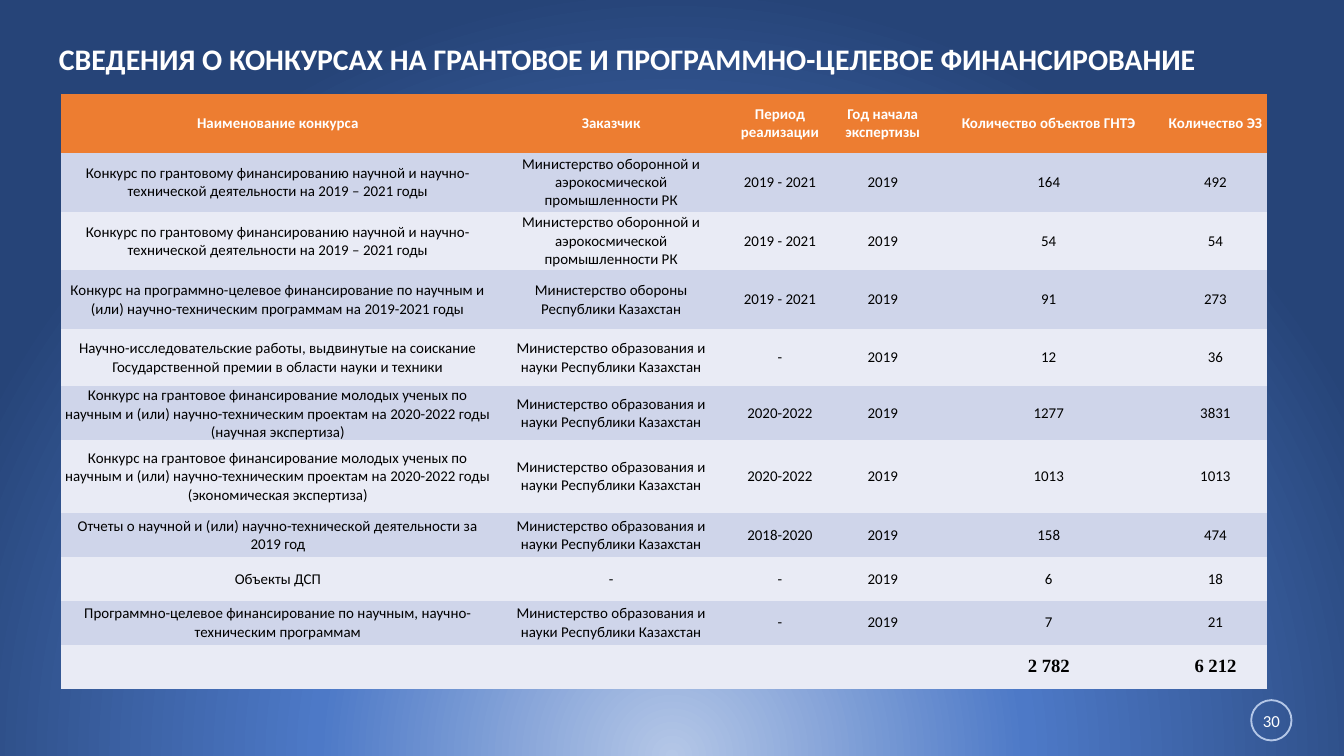
from lxml import etree
from pptx import Presentation
from pptx.dml.color import RGBColor
from pptx.enum.shapes import MSO_SHAPE
from pptx.enum.text import MSO_ANCHOR, MSO_AUTO_SIZE, PP_ALIGN
from pptx.oxml.ns import qn
from pptx.util import Pt

OVAL = MSO_SHAPE.OVAL
MIDDLE = MSO_ANCHOR.MIDDLE
LEFT, CENTER = PP_ALIGN.LEFT, PP_ALIGN.CENTER
FIT_SHAPE = MSO_AUTO_SIZE.SHAPE_TO_FIT_TEXT
NO_GRID_STYLE = "{2D5ABB26-0587-4C30-8999-92F81FD0307C}"

WHITE, BLACK = "FFFFFF", "000000"
ORANGE, BAND_DARK, BAND_LIGHT = "ED7D31", "CFD5EA", "E9EBF5"
GRADIENT = [(0, "B4C7E7"), (46, "4D79C7"), (100, "264478")]

GRANT = "Конкурс по грантовому финансированию научной и научно-технической деятельности на 2019 – 2021 годы"
YOUNG = "Конкурс на грантовое финансирование молодых ученых по научным и (или) научно-техническим проектам на 2020-2022 годы"
AEROSPACE = "Министерство оборонной и аэрокосмической промышленности РК"
DEFENCE = "Министерство обороны Республики Казахстан"
EDUCATION = "Министерство образования и науки Республики Казахстан"

ROWS = [
    ("Наименование конкурса", "Заказчик", "Период реализации", "Год начала экспертизы",
     "Количество объектов ГНТЭ", "Количество ЭЗ"),
    (GRANT, AEROSPACE, "2019 - 2021", "2019", "164", "492"),
    (GRANT, AEROSPACE, "2019 - 2021", "2019", "54", "54"),
    ("Конкурс на программно-целевое финансирование по научным и (или) научно-техническим программам на 2019-2021 годы",
     DEFENCE, "2019 - 2021", "2019", "91", "273"),
    ("Научно-исследовательские работы, выдвинутые на соискание Государственной премии в области науки и техники",
     EDUCATION, "-", "2019", "12", "36"),
    (YOUNG + " (научная экспертиза)", EDUCATION, "2020-2022", "2019", "1277", "3831"),
    (YOUNG + " (экономическая экспертиза)", EDUCATION, "2020-2022", "2019", "1013", "1013"),
    ("Отчеты о научной и (или) научно-технической деятельности за 2019 год",
     EDUCATION, "2018-2020", "2019", "158", "474"),
    ("Объекты ДСП", "-", "-", "2019", "6", "18"),
    ("Программно-целевое финансирование по научным, научно-техническим программам",
     EDUCATION, "-", "2019", "7", "21"),
    ("", "", "", "", "2 782", "6 212"),
]
COLUMN_WIDTHS = [232.6, 124.6, 56.2, 54, 123.8, 54.8]
ROW_HEIGHTS = [31.5] * 4 + [30.6, 28.2, 39.2] + [23.5] * 4


def color(value):
    return RGBColor.from_string(value)


def add_span(para, text, size, ink, bold=False, face="Calibri"):
    span = para.add_run()
    span.text = text
    span.font.name = face
    span.font.size = Pt(size)
    span.font.bold = bold
    span.font.color.rgb = color(ink)


deck = Presentation()
deck.slide_width, deck.slide_height = Pt(720), Pt(405)
page = deck.slides.add_slide(deck.slide_layouts[5])

page.background.fill.gradient()
gradient = page.background._cSld.find(".//" + qn("a:gradFill"))
for child in list(gradient):
    gradient.remove(child)
stops = etree.SubElement(gradient, qn("a:gsLst"))
for position, shade in GRADIENT:
    stop = etree.SubElement(stops, qn("a:gs"), pos=str(position * 1000))
    etree.SubElement(stop, qn("a:srgbClr"), val=shade)
circle = etree.SubElement(gradient, qn("a:path"), path="circle")
etree.SubElement(circle, qn("a:fillToRect"), l="50000", t="130000", r="50000", b="-30000")

title = page.shapes.title
title.left, title.top, title.width, title.height = Pt(26.6), Pt(15.8), Pt(633), Pt(27.4)
frame = title.text_frame
frame.word_wrap = True
frame.auto_size = FIT_SHAPE
frame.vertical_anchor = MIDDLE
frame.margin_left = frame.margin_right = Pt(5)
frame.margin_top = frame.margin_bottom = Pt(2.7)
para = frame.paragraphs[0]
para.alignment = LEFT
para.line_spacing = 1.2
add_span(para, "СВЕДЕНИЯ О КОНКУРСАХ НА ГРАНТОВОЕ И ПРОГРАММНО-ЦЕЛЕВОЕ ФИНАНСИРОВАНИЕ", 16, WHITE, True)

table = page.shapes.add_table(len(ROWS), len(COLUMN_WIDTHS), Pt(32.6), Pt(50.4),
                              Pt(sum(COLUMN_WIDTHS)), Pt(sum(ROW_HEIGHTS))).table
table._tbl.tblPr.find(qn("a:tableStyleId")).text = NO_GRID_STYLE
for column, width in zip(table.columns, COLUMN_WIDTHS):
    column.width = Pt(width)
for row, height in zip(table.rows, ROW_HEIGHTS):
    row.height = Pt(height)

for row_index, texts in enumerate(ROWS):
    is_header = row_index == 0
    is_total = row_index == len(ROWS) - 1
    band = ORANGE if is_header else BAND_DARK if row_index % 2 else BAND_LIGHT
    for column_index, text in enumerate(texts):
        cell = table.cell(row_index, column_index)
        cell.fill.solid()
        cell.fill.fore_color.rgb = color(band)
        cell.vertical_anchor = MIDDLE
        cell.margin_left = cell.margin_right = Pt(0.7 if is_header else 1.4)
        cell.margin_top = cell.margin_bottom = Pt(0)
        para = cell.text_frame.paragraphs[0]
        para.alignment = CENTER
        if text and is_total:
            add_span(para, text, 10, BLACK, True, "Times New Roman")
        elif text:
            add_span(para, text, 8, WHITE if is_header else BLACK, is_header)

badge = page.shapes.add_shape(OVAL, Pt(670.3), Pt(375.1), Pt(21.6), Pt(21.6))
badge.shadow.inherit = False
badge.fill.background()
badge.line.color.rgb = color("B4C7E7")
badge.line.width = Pt(1)
frame = badge.text_frame
frame.word_wrap = False
frame.vertical_anchor = MIDDLE
frame.margin_left = frame.margin_right = frame.margin_top = frame.margin_bottom = Pt(0)
para = frame.paragraphs[0]
para.alignment = CENTER
add_span(para, "30", 9, WHITE)

deck.save("out.pptx")
